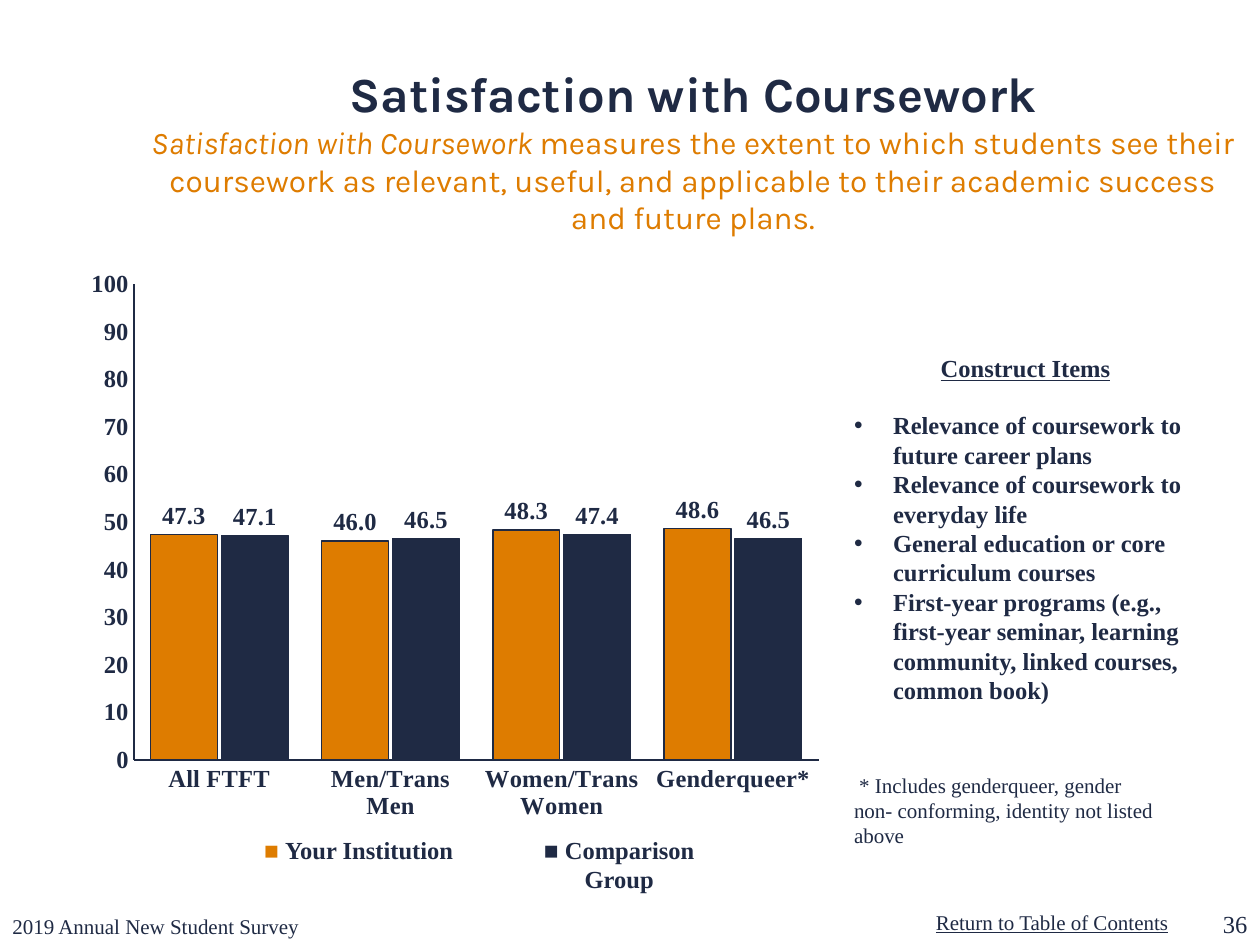
from dataclasses import dataclass

from lxml import etree
from pptx import Presentation
from pptx.chart.data import CategoryChartData
from pptx.dml.color import RGBColor
from pptx.enum.chart import XL_CHART_TYPE, XL_LABEL_POSITION, XL_TICK_MARK
from pptx.enum.text import MSO_ANCHOR, MSO_AUTO_SIZE, PP_ALIGN
from pptx.oxml import parse_xml
from pptx.oxml.ns import nsdecls, qn
from pptx.util import Inches, Pt

COLUMN_CLUSTERED = XL_CHART_TYPE.COLUMN_CLUSTERED
OUTSIDE_END = XL_LABEL_POSITION.OUTSIDE_END
NO_TICK = XL_TICK_MARK.NONE
TOP, BOTTOM = MSO_ANCHOR.TOP, MSO_ANCHOR.BOTTOM
LEFT, CENTER, RIGHT = PP_ALIGN.LEFT, PP_ALIGN.CENTER, PP_ALIGN.RIGHT
NO_FIT = MSO_AUTO_SIZE.NONE
SLIDE_WIDTH, SLIDE_HEIGHT = Inches(10), Inches(7.5)


@dataclass(frozen=True)
class Theme:
    """Colours, fonts and type sizes of the slide."""
    navy: RGBColor = RGBColor(0x1F, 0x2A, 0x44)
    orange: RGBColor = RGBColor(0xDE, 0x7C, 0x00)
    heading_font: str = "Karla"
    body_font: str = "Times New Roman"
    title: Pt = Pt(28)
    subtitle: Pt = Pt(18)
    body: Pt = Pt(14)
    small: Pt = Pt(12)


THEME = Theme()

BOXES = {
    "title": (0.1, 0.061, 0.9, 0.167),
    "chart": (0.017, 0.233, 0.969, 0.655),
    "legend": (0.197, 0.877, 0.39, 0.045),
    "construct": (0.668, 0.367, 0.292, 0.389),
    "footnote": (0.668, 0.811, 0.267, 0.067),
    "footer": (0, 0.933, 1, 0.067),
}

CATEGORIES = ["All FTFT", "Men/Trans Men", "Women/Trans Women", "Genderqueer*"]
SERIES = {
    "Your Institution": ((47.3, 46.0, 48.3, 48.6), THEME.orange),
    "Comparison Group": ((47.1, 46.5, 47.4, 46.5), THEME.navy),
}
PLOT_AREA = {"x": 0.092, "y": 0.103, "w": 0.561, "h": 0.769}
CONSTRUCT_ITEMS = [
    "Relevance of coursework to future career plans",
    "Relevance of coursework to everyday life",
    "General education or core curriculum courses",
    "First-year programs (e.g., first-year seminar, learning community, "
    "linked courses, common book)",
]


def apply_format(target, values):
    """Set each attribute in values on the target."""
    for name, value in values.items():
        setattr(target, name, value)


def format_font(font, color=THEME.navy, **values):
    """Give a font the body face, a colour and any further values."""
    apply_format(font, {"name": THEME.body_font, "size": THEME.body, **values})
    font.color.rgb = color


def to_lengths(box):
    """Turn shares of the slide into lengths."""
    left, top, width, height = box
    return (round(left * SLIDE_WIDTH), round(top * SLIDE_HEIGHT),
            round(width * SLIDE_WIDTH), round(height * SLIDE_HEIGHT))


def part_of(box, left, width, top=0, height=1):
    """Return a part of a box, given as shares of that box."""
    return (box[0] + left * box[2], box[1] + top * box[3],
            width * box[2], height * box[3])


def add_run(paragraph, text, **values):
    """Append a formatted run."""
    run = paragraph.add_run()
    run.text = text
    format_font(run.font, **values)


def add_text(slide, box, runs, align=LEFT, anchor=TOP, wrap=True):
    """Place a text box whose first paragraph holds the given runs."""
    frame = slide.shapes.add_textbox(*to_lengths(box)).text_frame
    apply_format(frame, {"word_wrap": wrap, "vertical_anchor": anchor, "auto_size": NO_FIT})
    paragraph = frame.paragraphs[0]
    paragraph.alignment = align
    for text, values in runs:
        add_run(paragraph, text, **values)
    return frame


def build_title(slide, box):
    """Fill the title placeholder with a heading and its definition."""
    title = slide.shapes.title
    lengths = dict(zip(("left", "top", "width", "height"), to_lengths(box)))
    apply_format(title, lengths)
    frame = title.text_frame
    apply_format(frame, {"word_wrap": True, "vertical_anchor": TOP, "auto_size": NO_FIT})
    paragraph = frame.paragraphs[0]
    paragraph.alignment = CENTER
    name = "Satisfaction with Coursework"
    definition = {"name": THEME.heading_font, "size": THEME.subtitle,
                  "color": THEME.orange, "bold": False}
    add_run(paragraph, name, name=THEME.heading_font, size=THEME.title, bold=True)
    paragraph.add_line_break()
    add_run(paragraph, name + " ", italic=True, **definition)
    add_run(paragraph, "measures the extent to which students see their coursework as "
            "relevant, useful, and applicable to their academic success and future plans.",
            italic=False, **definition)


def set_plot_area(chart):
    """Fix the inner plot area within the chart."""
    plot_area = chart._chartSpace.chart.plotArea
    for layout in plot_area.findall(qn("c:layout")):
        plot_area.remove(layout)
    layout = parse_xml(f"<c:layout {nsdecls('c')}><c:manualLayout/></c:layout>")
    settings = {"layoutTarget": "inner", "xMode": "edge", "yMode": "edge", **PLOT_AREA}
    for name, value in settings.items():
        etree.SubElement(layout[0], qn(f"c:{name}")).set("val", str(value))
    plot_area.insert(0, layout)


def build_chart(slide, box):
    """Draw the clustered columns for each student group."""
    data = CategoryChartData(number_format="0.0")
    data.categories = CATEGORIES
    for name, (values, _) in SERIES.items():
        data.add_series(name, values)
    chart = slide.shapes.add_chart(COLUMN_CLUSTERED, *to_lengths(box), data).chart
    apply_format(chart, {"has_legend": False, "has_title": False})
    format_font(chart.font, bold=True)
    plot = chart.plots[0]
    apply_format(plot, {"gap_width": 50, "overlap": -6, "vary_by_categories": False})
    for series, (_, color) in zip(plot.series, SERIES.values()):
        series.format.fill.solid()
        series.format.fill.fore_color.rgb = color
        series.format.line.color.rgb = THEME.navy
        series.format.line.width = Pt(0.75)
        labels = series.data_labels
        apply_format(labels, {"show_value": True, "number_format": "0.0",
                              "number_format_is_linked": False, "position": OUTSIDE_END})
        format_font(labels.font, bold=True)
    for axis in (chart.category_axis, chart.value_axis):
        apply_format(axis, {"major_tick_mark": NO_TICK, "minor_tick_mark": NO_TICK,
                            "has_major_gridlines": False})
        axis.format.line.color.rgb = THEME.navy
        axis.format.line.width = Pt(1)
        format_font(axis.tick_labels.font, bold=True)
    apply_format(chart.value_axis, {"minimum_scale": 0, "maximum_scale": 100, "major_unit": 10})
    apply_format(chart.value_axis.tick_labels,
                 {"number_format": "#,##0", "number_format_is_linked": False})
    set_plot_area(chart)


def build_legend(slide, box):
    """Place one key for each series, side by side."""
    places = ((0, 0.45), (0.51, 0.49))
    for (name, (_, color)), place in zip(SERIES.items(), places):
        add_text(slide, part_of(box, *place),
                 [("■ ", {"color": color, "bold": True}), (name, {"bold": True})], CENTER)


def build_construct(slide, box):
    """List the items that make up the construct."""
    frame = add_text(slide, box, [("Construct Items", {"bold": True, "underline": True})], CENTER)
    frame.paragraphs[0].space_after = Pt(16)
    for item in CONSTRUCT_ITEMS:
        paragraph = frame.add_paragraph()
        properties = paragraph._p.get_or_add_pPr()
        properties.set("marL", str(Inches(0.31)))
        properties.set("indent", str(-Inches(0.31)))
        etree.SubElement(properties, qn("a:buFont")).set("typeface", "Arial")
        etree.SubElement(properties, qn("a:buChar")).set("char", "•")
        add_run(paragraph, item, bold=True)


def build_footnote(slide, box):
    """Explain the starred category."""
    text = " * Includes genderqueer, gender non- conforming, identity not listed above"
    add_text(slide, box, [(text, {"size": THEME.small})])


def build_footer(slide, box):
    """Place the survey name, the return label and the slide number."""
    small = {"size": THEME.small}
    add_text(slide, part_of(box, 0, 0.317),
             [("2019 Annual New Student Survey", small)], anchor=BOTTOM)
    add_text(slide, part_of(box, 0.733, 0.207, 0.34, 0.6),
             [("Return to Table of Contents", {"underline": True, **small})], wrap=False)
    add_text(slide, part_of(box, 0.917, 0.083), [("36", {})], RIGHT, BOTTOM)


def main():
    """Build the slide and save it."""
    presentation = Presentation()
    apply_format(presentation, {"slide_width": SLIDE_WIDTH, "slide_height": SLIDE_HEIGHT})
    slide = presentation.slides.add_slide(presentation.slide_layouts[5])
    builders = {"title": build_title, "chart": build_chart, "legend": build_legend,
                "construct": build_construct, "footnote": build_footnote,
                "footer": build_footer}
    for region, build in builders.items():
        build(slide, BOXES[region])
    presentation.save("out.pptx")


if __name__ == "__main__":
    main()
